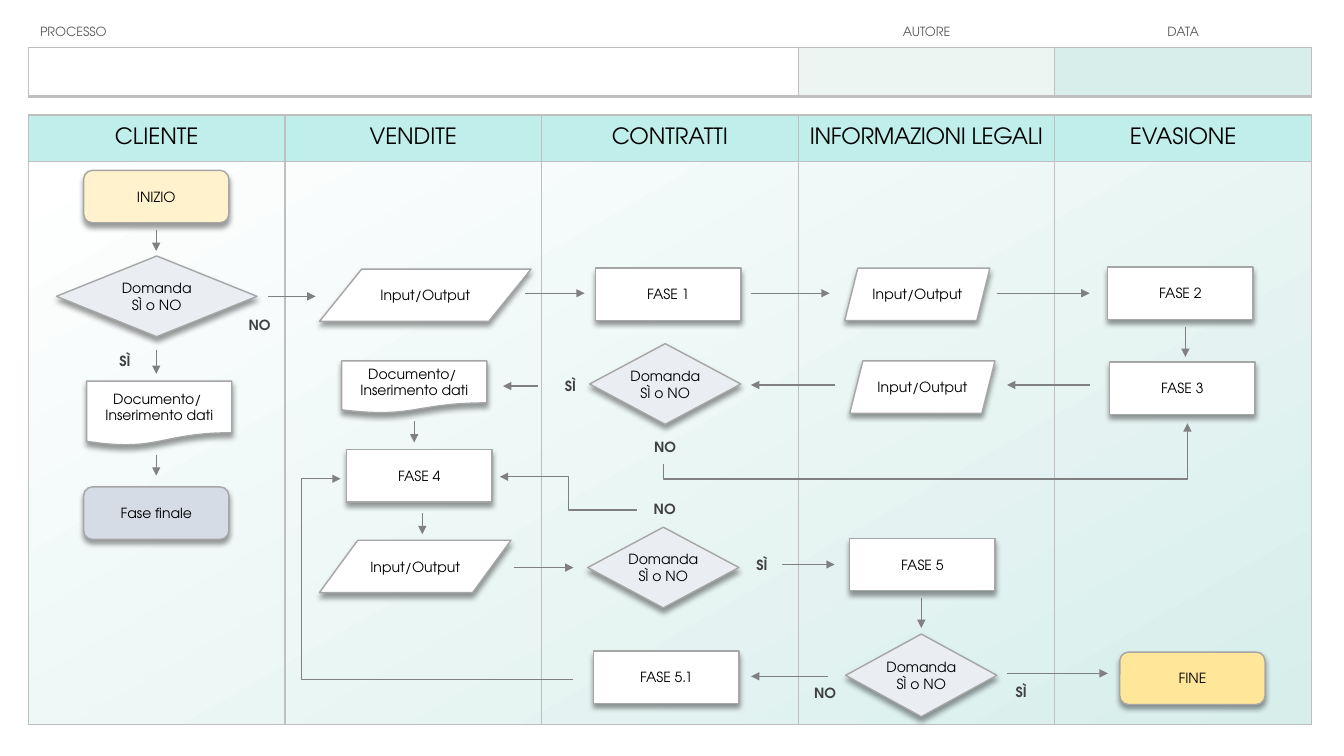
from lxml.etree import SubElement
from pptx import Presentation
from pptx.dml.color import RGBColor
from pptx.enum.shapes import MSO_CONNECTOR, MSO_SHAPE
from pptx.enum.text import MSO_ANCHOR, PP_ALIGN
from pptx.oxml.ns import qn
from pptx.util import Pt

FONT = "TeX Gyre Adventor"
PLAIN = "{2D5ABB26-0587-4C30-8999-92F81FD0307C}"
GRID = "BFBFBF"
LEFT, WIDTH = 20.2, 916.6
LANE = WIDTH / 5
hue = RGBColor.from_string


def write(text, frame, holder, size, tone, bold=False, inset=1.4):
    """Centre text in a frame; holder owns the margins and the anchor."""
    holder.margin_left = holder.margin_right = Pt(inset)
    holder.margin_top = holder.margin_bottom = Pt(inset)
    holder.vertical_anchor = MSO_ANCHOR.MIDDLE
    frame.word_wrap = True
    frame.text = text
    for para in frame.paragraphs:
        para.alignment = PP_ALIGN.CENTER
        para.font.name = FONT
        para.font.size = Pt(size)
        para.font.bold = bold
        para.font.color.rgb = hue(tone)


def edge(cell, sides):
    """Draw cell borders; sides maps L, R, T, B to a width in points."""
    props = cell._tc.get_or_add_tcPr()
    for spot, side in enumerate("LRTB"):
        line = SubElement(props, qn(f"a:ln{side}"), w=str(Pt(sides.get(side, 0))))
        if side in sides:
            fill = SubElement(line, qn("a:solidFill"))
            SubElement(fill, qn("a:srgbClr"), val=GRID)
        else:
            SubElement(line, qn("a:noFill"))
        props.insert(spot, line)


deck = Presentation()
deck.slide_width, deck.slide_height = Pt(960), Pt(540)
slide = deck.slides.add_slide(deck.slide_layouts[6])
shapes = slide.shapes

# Shaded ground behind the lanes
ground = shapes.add_shape(MSO_SHAPE.RECTANGLE, Pt(LEFT), Pt(115.2), Pt(WIDTH), Pt(401.8))
ground.shadow.inherit = False
ground.line.fill.background()
ground.fill.gradient()
ground.fill.gradient_angle = 300
for stop, tone in zip(ground.fill.gradient_stops, ("FFFFFF", "D7EEEB")):
    stop.color.rgb = hue(tone)

# Tables: top, column widths, row heights, font size and colour, heads, fills, borders
FULL = dict.fromkeys("LRTB", 1)
tables = [
    (82.1, [LANE] * 5, (33.1, 402.5), 16, "000000",
     ("CLIENTE", "VENDITE", "CONTRATTI", "INFORMAZIONI LEGALI", "EVASIONE"),
     (["BFEEEB"] * 5, [None] * 5), (FULL, FULL)),
    (13.7, [LANE * 3, LANE, LANE], (20.2, 35), 9, "595959",
     ("PROCESSO", "AUTORE", "DATA"),
     ([None] * 3, ("FFFFFF", "EDF5F3", "D7EEEB")), ({"B": 1}, FULL | {"B": 2.25})),
]
grids = []
for top, cols, rows, size, tone, heads, fills, sides in tables:
    grid = shapes.add_table(2, len(cols), Pt(LEFT), Pt(top), Pt(WIDTH), Pt(sum(rows))).table
    grid.first_row = grid.horz_banding = False
    grid._tbl.tblPr.find(qn("a:tableStyleId")).text = PLAIN
    for col, width in zip(grid.columns, cols):
        col.width = Pt(width)
    for r, height in enumerate(rows):
        grid.rows[r].height = Pt(height)
        for c, fill in enumerate(fills[r]):
            cell = grid.cell(r, c)
            if r == 0:
                write(heads[c], cell.text_frame, cell, size, tone, inset=0.5)
            if fill:
                cell.fill.solid()
                cell.fill.fore_color.rgb = hue(fill)
            else:
                cell.fill.background()
            edge(cell, sides[r])
    grids.append(grid)
lanes, header = grids
legal = lanes.cell(0, 3).text_frame.paragraphs[0].runs[0]
legal.font._element.set("spc", "-20")
process = header.cell(0, 0)
process.margin_left = Pt(8.4)
process.text_frame.paragraphs[0].alignment = PP_ALIGN.LEFT

# Flow nodes: kind, text, fill, left, top, then width and height if not usual
STEP = MSO_SHAPE.FLOWCHART_PROCESS
ALT = MSO_SHAPE.FLOWCHART_ALTERNATE_PROCESS
DATA = MSO_SHAPE.FLOWCHART_DATA
SLANT = MSO_SHAPE.PARALLELOGRAM
PAPER = MSO_SHAPE.FLOWCHART_DOCUMENT
FORK = MSO_SHAPE.FLOWCHART_DECISION
ASK, IO, DOC = "Domanda\nSÌ o NO", "Input/Output", "Documento/ \nInserimento dati"
WHITE, PALE = "FFFFFF", "EAEEF3"
nodes = [
    (ALT, "INIZIO", "FFF2CC", 59.8, 121.7),
    (FORK, ASK, PALE, 40.3, 182.9, 143.3, 57.6),
    (PAPER, DOC, WHITE, 61.9, 272.2, 103.7, 46.1),
    (ALT, "Fase finale", "D6DCE5", 59.8, 347.8),
    (DATA, IO, WHITE, 228.2, 192.2, 151.2),
    (PAPER, DOC, WHITE, 244.1, 257.8),
    (STEP, "FASE 4", WHITE, 247.7, 321.1),
    (DATA, IO, WHITE, 228.2, 385.9, 136.8),
    (STEP, "FASE 1", WHITE, 425.5, 191.5),
    (FORK, ASK, PALE, 421.2, 245.5, 108, 57.6),
    (FORK, ASK, PALE, 419.8, 376.6, 108, 57.6),
    (STEP, "FASE 5.1", WHITE, 424.1, 465.1),
    (SLANT, IO, WHITE, 603.4, 191.5),
    (SLANT, IO, WHITE, 607, 257.8),
    (STEP, "FASE 5", WHITE, 607, 384.5),
    (FORK, ASK, PALE, 604.1, 452.9, 108, 59),
    (STEP, "FASE 2", WHITE, 791.3, 190.8),
    (STEP, "FASE 3", WHITE, 792.7, 258.5),
    (MSO_SHAPE.ROUNDED_RECTANGLE, "FINE", "FFE699", 799.9, 465.8),
]
for kind, text, fill, left, top, *size in nodes:
    width, height = (size + [103.7, 37.4][len(size):])
    node = shapes.add_shape(kind, Pt(left), Pt(top), Pt(width), Pt(height))
    node.fill.solid()
    node.fill.fore_color.rgb = hue(fill)
    node.line.color.rgb = hue("A6A6A6")
    node.line.width = Pt(1)
    node.shadow.inherit = False
    effects = node._element.spPr.find(qn("a:effectLst"))
    shade = SubElement(effects, qn("a:outerShdw"), blurRad=str(Pt(4)), dist=str(Pt(3)),
                       dir="5400000", algn="t", rotWithShape="0")
    black = SubElement(shade, qn("a:srgbClr"), val="000000")
    SubElement(black, qn("a:alpha"), val="40000")
    write(text, node.text_frame, node.text_frame, 10, "000000")

# Answers beside the decisions
answers = [
    ("SÌ", 68.4, 248.4, 41.8, 19.4), ("NO", 165.6, 222.5, 39.6, 19.4),
    ("SÌ", 393.8, 269.3, 27.4, 12.2), ("NO", 462.2, 313.2, 25.9, 12.2),
    ("SÌ", 523.4, 393.8, 41.8, 19.4), ("NO", 455, 354.2, 39.6, 19.4),
    ("SÌ", 708.5, 486.7, 41.8, 15.1), ("NO", 569.5, 487.4, 39.6, 15.1),
]
for text, *place in answers:
    frame = shapes.add_textbox(*map(Pt, place)).text_frame
    write(text, frame, frame, 10, "404040", bold=True)

# Arrows: start x, y, end x, y, then bend and turn for elbows
arrows = [
    (191.5, 211.7, 225.4, 211.7), (111.6, 249.8, 111.6, 267.1),
    (111.6, 164.2, 111.6, 179.3), (295.9, 301, 295.9, 316.1),
    (111.6, 324.7, 111.6, 339.8), (375.1, 209.5, 417.6, 209.5),
    (536.4, 209.5, 592.6, 209.5), (712.1, 209.5, 778.3, 209.5),
    (846.7, 233.3, 846.7, 254.9), (596.2, 275, 536.4, 275),
    (778.3, 275, 719.3, 275), (384.5, 275.8, 359.3, 275.8),
    (301.7, 366.5, 301.7, 381.6), (558.7, 403.2, 596.2, 403.2),
    (658.1, 427, 658.1, 448.6), (591.8, 483.1, 536.4, 483.1),
    (719.3, 481, 791.3, 481), (367.2, 405.4, 409.7, 405.4),
    (646.6, 129.6, 675.4, 504, -0.38, 270),
    (455, 364.3, 357.1, 340.6, 0.5, 0),
    (409, 485.3, 243.4, 342, 1.17, 0),
]
for *ends, bend, turn in [a if len(a) == 6 else (*a, None, 0) for a in arrows]:
    kind = MSO_CONNECTOR.STRAIGHT if bend is None else MSO_CONNECTOR.ELBOW
    arrow = shapes.add_connector(kind, *map(Pt, ends))
    arrow.line.color.rgb = hue("808080")
    arrow.line.width = Pt(1)
    props = arrow._element.spPr
    SubElement(props.find(qn("a:ln")), qn("a:tailEnd"), type="triangle")
    SubElement(props, qn("a:effectLst"))
    if bend is not None:
        props.find(qn("a:xfrm")).set("rot", str(turn * 60000))
        SubElement(props.find(f".//{qn('a:avLst')}"), qn("a:gd"), name="adj1",
                   fmla=f"val {round(bend * 100000)}")

deck.save("out.pptx")
